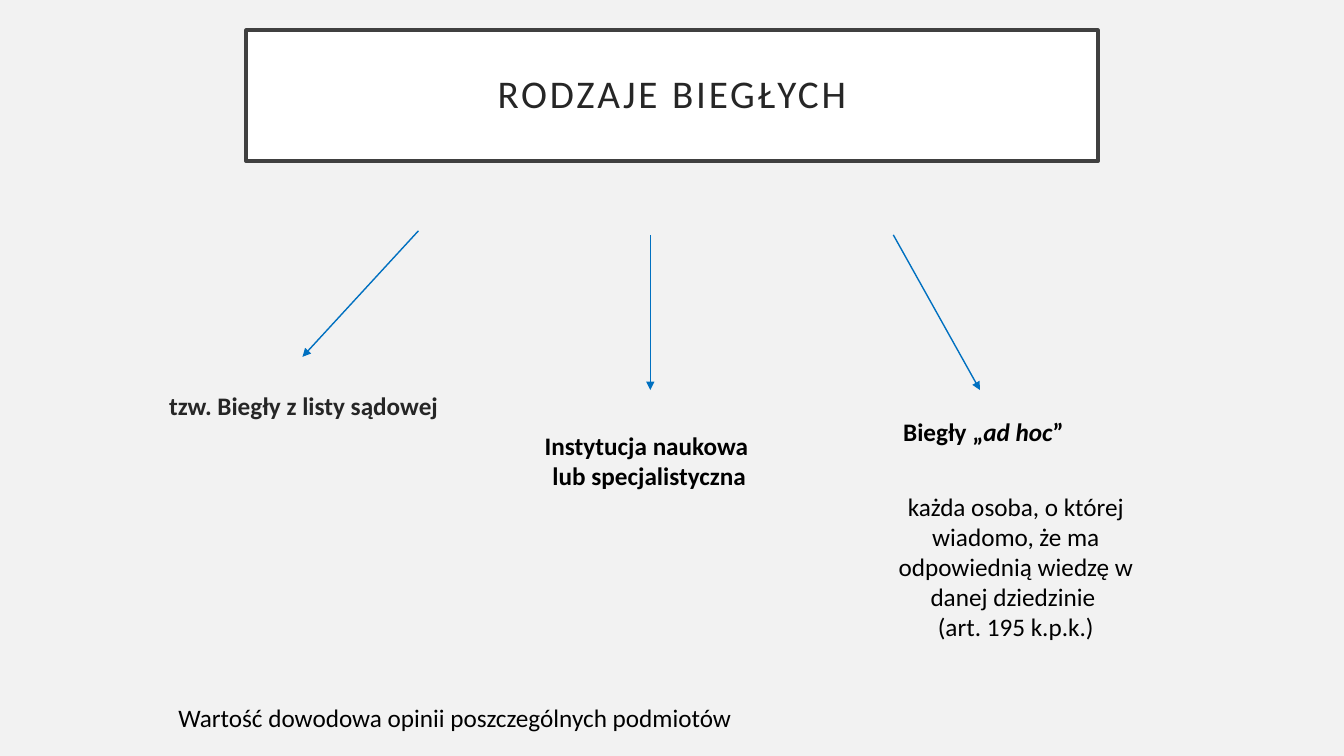
from lxml import etree
from pptx import Presentation
from pptx.dml.color import RGBColor
from pptx.enum.shapes import MSO_CONNECTOR, MSO_SHAPE
from pptx.enum.text import MSO_ANCHOR, PP_ALIGN
from pptx.oxml.ns import qn
from pptx.util import Inches, Pt

LEFT, CENTER = PP_ALIGN.LEFT, PP_ALIGN.CENTER
MIDDLE = MSO_ANCHOR.MIDDLE
STRAIGHT, RECT = MSO_CONNECTOR.STRAIGHT, MSO_SHAPE.RECTANGLE
COLORS = {"back": "F2F2F2", "panel": "FFFFFF", "frame": "404040",
          "dark": "262626", "text": "000000", "arrow": "0070C0"}
BASE = {"name": "Calibri", "size": Pt(18)}
BOLD = {**BASE, "bold": True}
SLANT = {**BOLD, "italic": True}
HEAD = {**BASE, "size": Pt(28)}


def paint(name):
    """Return the named colour."""
    return RGBColor.from_string(COLORS[name])


def write(frame, paras, align=LEFT, color="text"):
    """Fill a text frame with paragraphs of (text, format) runs."""
    frame.word_wrap = True
    for num, runs in enumerate(paras):
        para = frame.add_paragraph() if num else frame.paragraphs[0]
        para.alignment = align
        for text, style in runs:
            run = para.add_run()
            run.text = text
            run.font.color.rgb = paint(color)
            for key, value in style.items():
                setattr(run.font, key, value)


def add_title(slide, box, text):
    """Draw the framed title with spaced letters."""
    panel = slide.shapes.add_shape(RECT, *map(Inches, box))
    panel.shadow.inherit = False
    panel.fill.solid()
    panel.fill.fore_color.rgb = paint("panel")
    panel.line.color.rgb = paint("frame")
    panel.line.width = Pt(2.5)
    frame = panel.text_frame
    frame.vertical_anchor = MIDDLE
    write(frame, [[(text, HEAD)]], CENTER, "dark")
    para = frame.paragraphs[0]
    para.line_spacing = 0.9
    para.runs[0].font._element.set("spc", "200")


def add_arrow(slide, start, end):
    """Draw a thin arrow from start to end."""
    line = slide.shapes.add_connector(STRAIGHT, *map(Inches, start + end))
    line.line.color.rgb = paint("arrow")
    line.line.width = Pt(1)
    etree.SubElement(line.line._get_or_add_ln(), qn("a:tailEnd"), type="triangle")
    etree.SubElement(line._element.spPr, qn("a:effectLst"))


def add_label(slide, box, paras, align=LEFT, color="text"):
    """Place a wrapped text box."""
    label = slide.shapes.add_textbox(*map(Inches, box))
    write(label.text_frame, paras, align, color)


def add_kinds(slide, box):
    """Place the arrows and the three kinds of expert in the box."""
    left, top = box[:2]
    arrows = [((2.57, 0.24), (1.42, 1.49)),
              ((4.87, 0.28), (4.87, 1.82)),
              ((7.28, 0.28), (8.14, 1.82))]
    for ends in arrows:
        add_arrow(slide, *[(left + x, top + y) for x, y in ends])
    labels = [
        ((0, 1.77, 3.2, 0.4), [[("tzw. Biegły z listy sądowej", BOLD)]], LEFT, "dark"),
        ((3.55, 2.17, 2.62, 0.71), [[("Instytucja naukowa ", BOLD)],
                                    [("lub specjalistyczna", BOLD)]], CENTER, "text"),
        ((7.28, 2.03, 2.03, 0.4), [[("Biegły „", BOLD), ("ad hoc", SLANT),
                                    ("”", BOLD)]], LEFT, "text"),
        ((7.05, 2.77, 2.89, 1.62),
         [[("każda osoba, o której wiadomo, że ma odpowiednią wiedzę w "
            "danej dziedzinie ", BASE)], [("(art. 195 k.p.k.)", BASE)]], CENTER, "text"),
    ]
    for (x, y, width, height), paras, align, color in labels:
        add_label(slide, (left + x, top + y, width, height), paras, align, color)


def main():
    """Build and save the slide."""
    deck = Presentation()
    deck.slide_width, deck.slide_height = Inches(13.33), Inches(7.5)
    slide = deck.slides.add_slide(deck.slide_layouts[6])
    back = slide.background.fill
    back.solid()
    back.fore_color.rgb = paint("back")
    add_title(slide, (2.44, 0.3, 8.45, 1.3), "RODZAJE BIEGŁYCH")
    add_kinds(slide, (1.58, 2.05, 10.48, 4.87))
    add_label(slide, (1.67, 6.92, 6.58, 0.4),
              [[("Wartość dowodowa opinii poszczególnych podmiotów", BASE)]])
    deck.save("out.pptx")


if __name__ == "__main__":
    main()
